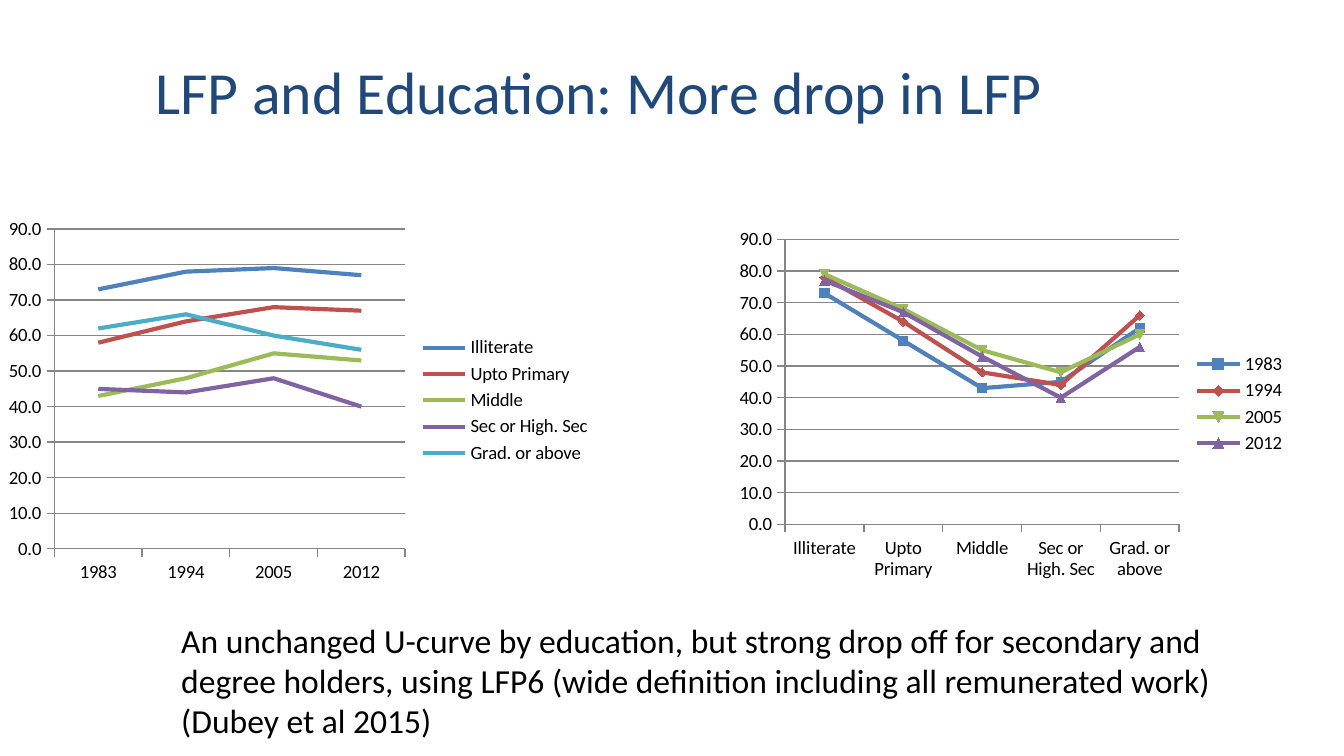
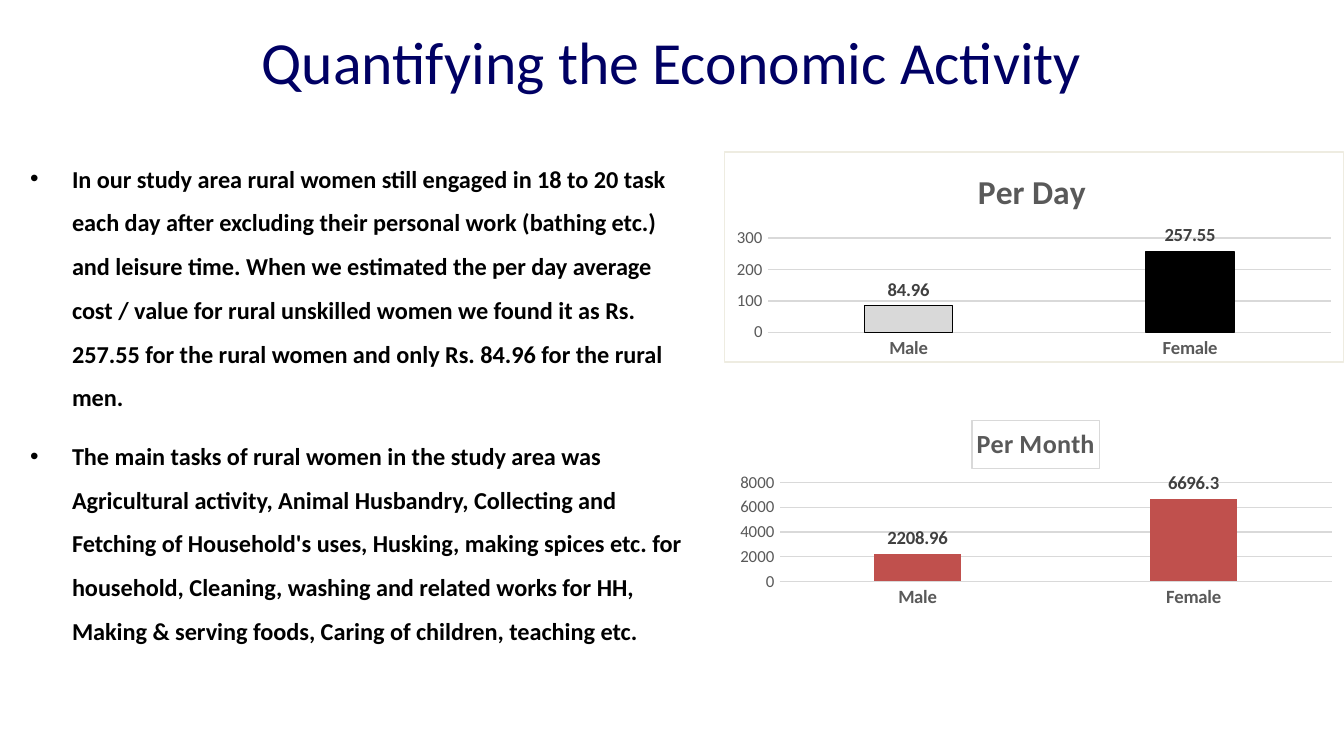
from lxml import etree
from pptx import Presentation
from pptx.chart.data import CategoryChartData
from pptx.dml.color import RGBColor
from pptx.enum.chart import (XL_CHART_TYPE, XL_LABEL_POSITION,
                             XL_LEGEND_POSITION, XL_TICK_MARK)
from pptx.enum.text import MSO_ANCHOR, MSO_AUTO_SIZE, PP_ALIGN
from pptx.oxml import parse_xml
from pptx.oxml.ns import nsdecls, qn
from pptx.util import Emu, Pt

LINE, MARKED = XL_CHART_TYPE.LINE, XL_CHART_TYPE.LINE_MARKERS
COLUMN = XL_CHART_TYPE.COLUMN_CLUSTERED
RIGHT, ABOVE = XL_LEGEND_POSITION.RIGHT, XL_LABEL_POSITION.OUTSIDE_END
TICK, BARE = XL_TICK_MARK.OUTSIDE, XL_TICK_MARK.NONE
TOP, MIDDLE = MSO_ANCHOR.TOP, MSO_ANCHOR.MIDDLE
GROW = MSO_AUTO_SIZE.SHAPE_TO_FIT_TEXT
LEFT, CENTER = PP_ALIGN.LEFT, PP_ALIGN.CENTER

SCALE = 9525
FONT = "Calibri"
COLORS = {
    "black": "000000", "navy": "000064", "title": "1F497D",
    "blue": "4F81BD", "red": "C0504D", "green": "9BBB59",
    "purple": "8064A2", "aqua": "4BACC6", "axis": "868686",
    "pale": "D9D9D9", "gray": "595959", "dark": "404040", "cream": "EEECE1",
}
HUES = ["blue", "red", "green", "purple", "aqua"]
YEARS = ["1983", "1994", "2005", "2012"]
RATES = {
    "Illiterate": [73, 78, 79, 77],
    "Upto Primary": [58, 64, 68, 67],
    "Middle": [43, 48, 55, 53],
    "Sec or High. Sec": [45, 44, 48, 40],
    "Grad. or above": [62, 66, 60, 56],
}
NOTE = [
    "An unchanged U-curve by education, but strong drop off for secondary and "
    "degree holders, using LFP6 (wide definition including all remunerated work)",
    "(Dubey et al 2015)",
]
TASKS = [
    "In our study area rural women still engaged in 18 to 20 task each day after "
    "excluding their personal work (bathing etc.) and leisure time. When we "
    "estimated the per day average cost / value for rural unskilled women we found "
    "it as Rs. 257.55 for the rural women and only Rs. 84.96 for the rural men.",
    "The main tasks of rural women in the study area was Agricultural activity, "
    "Animal Husbandry, Collecting and Fetching of Household's uses, Husking, making "
    "spices etc. for household, Cleaning, washing and related works for HH, Making "
    "& serving foods, Caring of children, teaching etc.",
]


def px(*sizes):
    return [Emu(size * SCALE) for size in sizes]


def hue(name):
    return RGBColor.from_string(COLORS[name])


def style(font, size, color="black", bold=False):
    font.name, font.size, font.bold = FONT, Pt(size), bold
    font.color.rgb = hue(color)


def stroke(line, color, width=0.75):
    line.color.rgb, line.width = hue(color), Pt(width)


def write(frame, texts, size=18, color="black", bold=False, align=LEFT,
          bullet=False, space=None, after=0):
    for i, text in enumerate(texts):
        para = frame.add_paragraph() if i else frame.paragraphs[0]
        para.alignment, para.space_after = align, Pt(after)
        if space:
            para.line_spacing = space
        if bullet:
            props = para._p.get_or_add_pPr()
            props.set("marL", str(30 * SCALE))
            props.set("indent", str(-30 * SCALE))
            etree.SubElement(props, qn("a:buFont")).set("typeface", "Arial")
            etree.SubElement(props, qn("a:buChar")).set("char", "•")
        run = para.add_run()
        run.text = text
        style(run.font, size, color, bold)


def place(node, index, spot, inner=False):
    for old in node.findall(qn("c:layout")):
        node.remove(old)
    marks = [("layoutTarget", "inner")] if inner else []
    marks += [("xMode", "edge"), ("yMode", "edge"), *zip("xywh", spot)]
    body = "".join(f'<c:{tag} val="{val}"/>' for tag, val in marks)
    node.insert(index, parse_xml(
        f'<c:layout {nsdecls("c")}><c:manualLayout>{body}'
        '</c:manualLayout></c:layout>'))


class Deck:
    """Holds the shared style and the current slide."""

    def __init__(self):
        self.show = Presentation()
        self.show.slide_width, self.show.slide_height = px(960, 540)

    def page(self):
        self.slide = self.show.slides.add_slide(self.show.slide_layouts[6])

    def text(self, box, texts, anchor=TOP, grow=True, **form):
        frame = self.slide.shapes.add_textbox(*px(*box)).text_frame
        frame.word_wrap, frame.vertical_anchor = True, anchor
        if grow:
            frame.auto_size = GROW
        write(frame, texts, **form)

    def title(self, box, text, color):
        self.text(box, [text], anchor=MIDDLE, grow=False, size=32,
                  color=color, align=CENTER)

    def chart(self, kind, box, plot, cats, rows, top, step, form, border=None):
        data = CategoryChartData()
        data.categories = cats
        for name, vals in rows.items():
            data.add_series(name, vals)
        chart = self.slide.shapes.add_chart(kind, *px(*box), data).chart
        style(chart.font, 10)
        chart.has_title = chart.has_legend = False
        root = chart.element
        place(root.find(".//" + qn("c:plotArea")), 0, plot, inner=True)
        fill = (f'<a:solidFill><a:srgbClr val="{COLORS[border]}"/></a:solidFill>'
                if border else "<a:noFill/>")
        root.find(qn("c:chart")).addnext(parse_xml(
            f'<c:spPr {nsdecls("c", "a")}><a:noFill/>'
            f'<a:ln w="9525">{fill}</a:ln></c:spPr>'))
        scale = chart.value_axis
        scale.minimum_scale, scale.maximum_scale = 0, top
        scale.major_unit, scale.has_major_gridlines = step, True
        scale.tick_labels.number_format = form
        scale.tick_labels.number_format_is_linked = False
        chart.plots[0].vary_by_categories = False
        return chart

    def axes(self, chart, color, tick):
        stroke(chart.value_axis.major_gridlines.format.line, color)
        for axis in (chart.value_axis, chart.category_axis):
            axis.major_tick_mark, axis.minor_tick_mark = tick, BARE
            stroke(axis.format.line, color)

    def lines(self, kind, box, plot, cats, rows):
        chart = self.chart(kind, box, plot, cats, rows, 90, 10, "0.0")
        self.axes(chart, "axis", TICK)
        chart.has_legend = True
        chart.legend.position = RIGHT
        chart.legend.include_in_layout = False
        for line, color in zip(chart.plots[0].series, HUES):
            line.smooth = False
            stroke(line.format.line, color, 2.25)

    def bars(self, box, plot, name, vals, top, step, spot, size, color,
             border=None):
        chart = self.chart(COLUMN, box, plot, ["Male", "Female"],
                           {"Series 1": vals}, top, step, "General", border)
        self.axes(chart, "pale", BARE)
        chart.value_axis.format.line.fill.background()
        style(chart.value_axis.tick_labels.font, 9, "gray")
        style(chart.category_axis.tick_labels.font, 10, "gray", True)
        chart.has_title = True
        head = chart.chart_title
        write(head.text_frame, [name], size=size, color="gray", bold=True,
              align=CENTER)
        place(head._element, 1, spot)
        group = chart.plots[0]
        group.gap_width, group.overlap = 219, -27
        group.has_data_labels = True
        labels = group.data_labels
        labels.show_value, labels.position = True, ABOVE
        style(labels.font, 10, "dark", True)
        bar = group.series[0]
        bar.format.fill.solid()
        bar.format.fill.fore_color.rgb = hue(color)
        return chart


def trends(deck):
    deck.page()
    deck.lines(LINE, (0, 150, 432, 272), (0.09, 0.05, 0.58, 0.84), YEARS, RATES)
    deck.title((0, 40, 856, 50), "LFP and Education: More drop in LFP", "title")
    spans = dict(zip(YEARS, zip(*RATES.values())))
    deck.lines(MARKED, (520, 158, 408, 261), (0.1, 0.05, 0.69, 0.78),
               list(RATES), spans)
    deck.text((120, 438, 779, 97), NOTE)


def worth(deck):
    deck.page()
    deck.title((0, 20, 960, 46), "Quantifying the Economic Activity", "navy")
    day = deck.bars((517, 108, 443, 151), (0.07, 0.41, 0.91, 0.45), "Per Day",
                    [84.96, 257.55], 300, 100, (0.4, 0.05), 18, "black", "cream")
    bar = day.plots[0].series[0]
    stroke(bar.format.line, "black")
    male = bar.points[0].format
    male.fill.solid()
    male.fill.fore_color.rgb = hue("pale")
    stroke(male.line, "black")
    month = deck.bars((517, 293, 443, 144), (0.09, 0.36, 0.89, 0.49), "Per Month",
                      [2208.96, 6696.3], 8000, 2000, (0.4, 0.05), 14, "red")
    stroke(month.chart_title.format.line, "pale")
    deck.text((12, 102, 492, 395), TASKS, size=13, bold=True, bullet=True,
              space=1.5, after=8)


def main():
    deck = Deck()
    trends(deck)
    worth(deck)
    deck.show.save("out.pptx")


if __name__ == "__main__":
    main()
